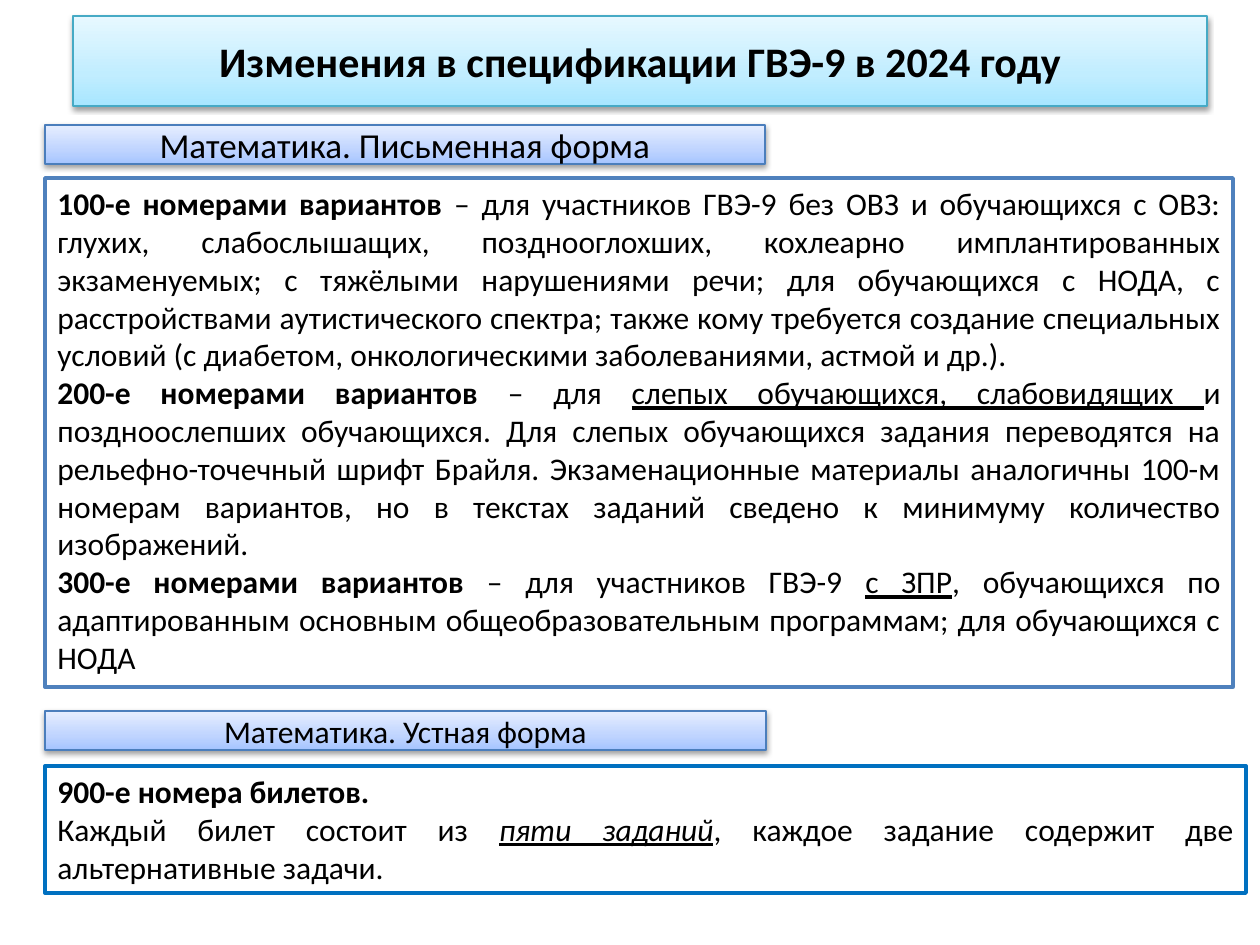
"""Builds the slide on changes in the GVE-9 specification for 2024."""
import pptx
import pptx.dml.color
import pptx.enum.shapes
import pptx.enum.text
import pptx.oxml
import pptx.oxml.ns
import pptx.util

ALIGN = pptx.enum.text.PP_ALIGN
ANCHOR = pptx.enum.text.MSO_ANCHOR
FIT = pptx.enum.text.MSO_AUTO_SIZE
PX = 914400 / 126
PLAIN, BOLD, LINED = {}, {"bold": True}, {"underline": True}
SLANTED = {"italic": True, "underline": True}
CYAN = {"stops": [(0, "A7E6FF"), (35, "C1EDFF"), (100, "E7F8FF")], "line": "46AAC5"}
BLUE = {"stops": [(0, "A4C4FF"), (35, "BFD4FF"), (100, "E6EEFF")], "line": "4B7EBC"}

TITLE = ("Изменения в спецификации ГВЭ-9 в 2024 году", (73, 16, 1134, 90))
HEADINGS = [
    ("Математика. Письменная форма", 20, (45, 125, 720, 39)),
    ("Математика. Устная форма", 18, (45, 711, 721, 39)),
]
WRITTEN = [
    [("100-е номерами вариантов ", BOLD),
     ("– для участников ГВЭ-9 без ОВЗ и обучающихся с ОВЗ: глухих, слабослышащих, "
      "позднооглохших, кохлеарно имплантированных экзаменуемых; с тяжёлыми нарушениями "
      "речи; для обучающихся с НОДА, с расстройствами аутистического спектра; также кому "
      "требуется создание специальных условий (с диабетом, онкологическими "
      "заболеваниями, астмой и др.). ", PLAIN)],
    [("200-е номерами вариантов ", BOLD),
     ("– для ", PLAIN),
     ("слепых обучающихся, слабовидящих ", LINED),
     ("и поздноослепших обучающихся. Для слепых обучающихся задания переводятся на "
      "рельефно-точечный шрифт Брайля. Экзаменационные материалы аналогичны 100-м "
      "номерам вариантов, но в текстах заданий сведено к минимуму количество "
      "изображений. ", PLAIN)],
    [("300-е номерами вариантов ", BOLD),
     ("– для участников ГВЭ-9 ", PLAIN),
     ("с ЗПР", LINED),
     (", обучающихся по адаптированным основным общеобразовательным программам; "
      "для обучающихся с НОДА", PLAIN)],
]
ORAL = [
    [("900-е номера билетов.", BOLD)],
    [("Каждый билет состоит из ", PLAIN),
     ("пяти заданий", SLANTED),
     (", каждое задание содержит две альтернативные задачи.", PLAIN)],
]
BODIES = [
    (WRITTEN, (45, 178, 1188, 509), {"fill": "FFFFFF", "line": "4F81BD", "width": 2}),
    (ORAL, (45, 766, 1201, 127), {"line": "0070C0", "width": 2.25}),
]


def emu(places):
    return [round(place * PX) for place in places]


def color(code):
    return pptx.dml.color.RGBColor.from_string(code)


def outline(box, code, width):
    box.line.color.rgb = color(code)
    box.line.width = pptx.util.Pt(width)


def element(markup):
    tag, rest = markup.split(" ", 1)
    return pptx.oxml.parse_xml(f"<{tag} {pptx.oxml.ns.nsdecls('a')} {rest}")


def write(box, paragraphs, size, align, **frame_format):
    frame = box.text_frame
    for name, value in {"word_wrap": True, **frame_format}.items():
        setattr(frame, name, value)
    for index, runs in enumerate(paragraphs):
        para = frame.add_paragraph() if index else frame.paragraphs[0]
        para.alignment = align
        for text, style in runs:
            span = para.add_run()
            span.text = text
            span.font.color.rgb = color("000000")
            values = {"name": "Calibri", "size": pptx.util.Pt(size), "bold": False, **style}
            for name, value in values.items():
                setattr(span.font, name, value)


def banner(box, text, size, style, look):
    box.fill.gradient()
    box.fill.gradient_angle = 90
    properties = box.element.spPr
    stops = properties.find(".//" + pptx.oxml.ns.qn("a:gsLst"))
    for stop in list(stops):
        stops.remove(stop)
    for position, code in look["stops"]:
        stops.append(element(
            f'a:gs pos="{position * 1000}"><a:srgbClr val="{code}"/></a:gs>'))
    outline(box, look["line"], 0.75)
    box.shadow.inherit = False
    properties.find(pptx.oxml.ns.qn("a:effectLst")).append(element(
        'a:outerShdw blurRad="40000" dist="20000" dir="5400000" rotWithShape="0">'
        '<a:srgbClr val="000000"><a:alpha val="38000"/></a:srgbClr></a:outerShdw>'))
    write(box, [[(text, style)]], size, ALIGN.CENTER,
          vertical_anchor=ANCHOR.MIDDLE, auto_size=FIT.NONE)


def main():
    deck = pptx.Presentation()
    deck.slide_width, deck.slide_height = emu((1260, 945))
    page = deck.slides.add_slide(deck.slide_layouts[5])

    text, place = TITLE
    title = page.shapes.title
    title.left, title.top, title.width, title.height = emu(place)
    banner(title, text, 24, BOLD, CYAN)

    for text, size, place in HEADINGS:
        box = page.shapes.add_shape(pptx.enum.shapes.MSO_SHAPE.RECTANGLE, *emu(place))
        banner(box, text, size, PLAIN, BLUE)

    for paragraphs, place, look in BODIES:
        box = page.shapes.add_textbox(*emu(place))
        if "fill" in look:
            box.fill.solid()
            box.fill.fore_color.rgb = color(look["fill"])
        outline(box, look["line"], look["width"])
        write(box, paragraphs, 18, ALIGN.JUSTIFY, auto_size=FIT.SHAPE_TO_FIT_TEXT)

    deck.save("out.pptx")


if __name__ == "__main__":
    main()
